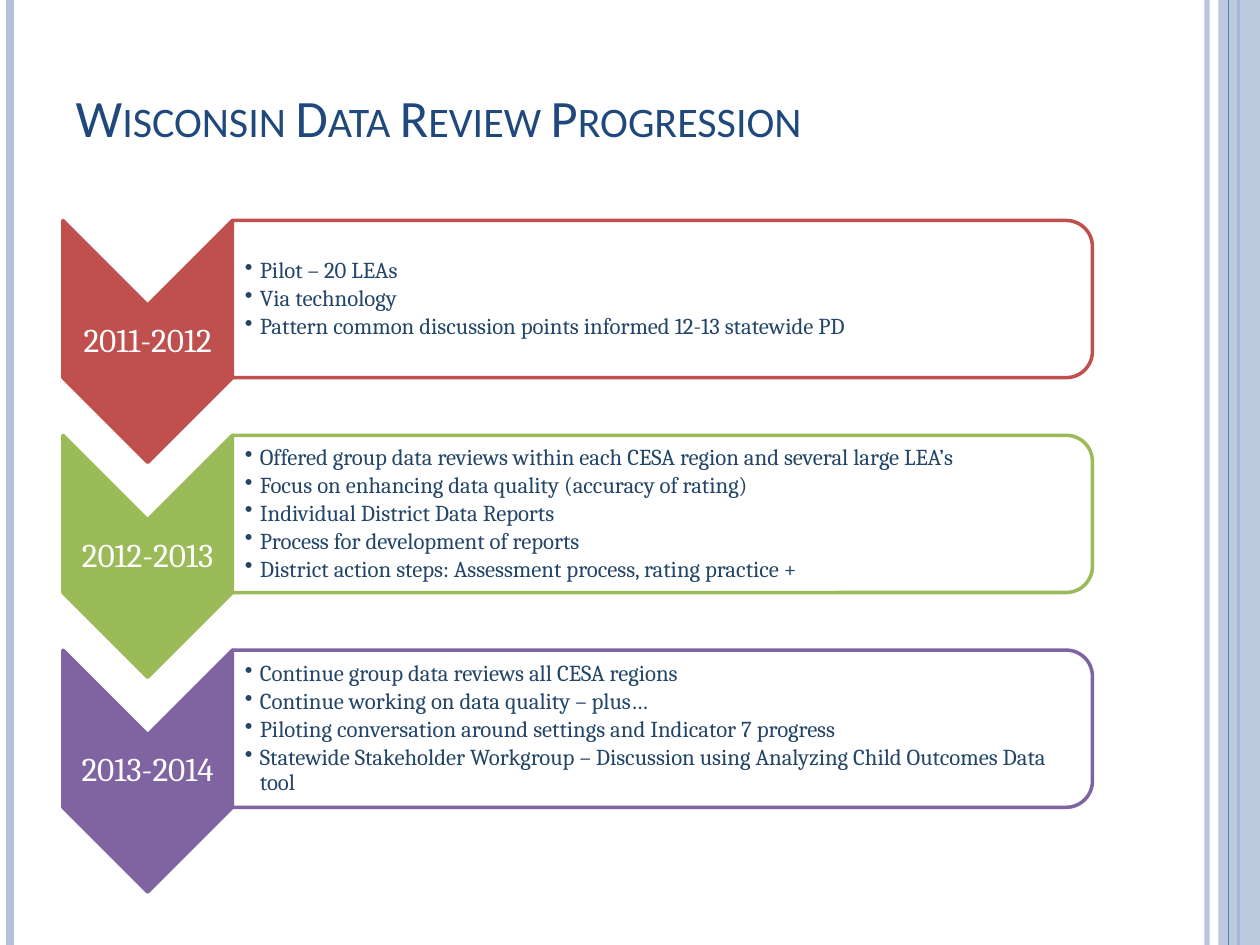
from dataclasses import dataclass

from lxml.etree import SubElement
from pptx import Presentation
from pptx.dml.color import RGBColor
from pptx.enum.shapes import MSO_CONNECTOR, MSO_SHAPE
from pptx.enum.text import MSO_ANCHOR, PP_ALIGN
from pptx.oxml.ns import qn
from pptx.util import Inches, Pt


@dataclass(frozen=True)
class Theme:
    title: str = "1F497D"
    body: str = "224568"
    white: str = "FFFFFF"
    band: str = "B3C1DB"
    rule: str = "4F81BD"
    phases: tuple = ("C0504D", "9BBB59", "8064A2")
    head_font: str = "Calibri"
    body_font: str = "Cambria"
    title_size: int = 30
    year_size: int = 19
    body_size: int = 13


T = Theme()
W, H = 10, 7.5

PHASES = [
    ("2011-2012", [
        "Pilot – 20 LEAs",
        "Via technology",
        "Pattern common discussion points informed 12-13 statewide PD",
    ]),
    ("2012-2013", [
        "Offered group data reviews within each CESA region and several large LEA’s",
        "Focus on enhancing data quality (accuracy of rating)",
        "Individual District Data Reports",
        "Process for development of reports",
        "District action steps: Assessment process, rating practice +",
    ]),
    ("2013-2014", [
        "Continue group data reviews all CESA regions",
        "Continue working on data quality – plus…",
        "Piloting conversation around settings and Indicator 7 progress",
        "Statewide Stakeholder Workgroup – Discussion using Analyzing Child Outcomes Data tool",
    ]),
]


def set_alpha(fill, percent):
    color = fill._xPr.find(qn("a:solidFill"))[0]
    SubElement(color, qn("a:alpha")).set("val", str(percent * 1000))


def add_shape(s, kind, box, fill, line=None, alpha=None, turned=False):
    """Place a shape in its visible box; a turned one is rotated a quarter."""
    x, y, w, h = box
    if turned:
        x, y, w, h = x + (w - h) / 2, y + (h - w) / 2, h, w
    sp = s.shapes.add_shape(kind, Inches(x), Inches(y), Inches(w), Inches(h))
    sp.shadow.inherit = False
    sp.rotation = 90 if turned else 0
    sp.fill.solid()
    sp.fill.fore_color.rgb = RGBColor.from_string(fill)
    if alpha:
        set_alpha(sp.fill, alpha)
    if line:
        sp.line.color.rgb = RGBColor.from_string(line)
        sp.line.width = Pt(2)
    else:
        sp.line.fill.background()
    return sp


def add_rule(s, x, color, width, alpha=None):
    """Draw a vertical rule over the full slide height."""
    line = s.shapes.add_connector(
        MSO_CONNECTOR.STRAIGHT, Inches(x), 0, Inches(x), Inches(H))
    line.line.color.rgb = RGBColor.from_string(color)
    line.line.width = Pt(width)
    if alpha:
        set_alpha(line.line.fill, alpha)
    SubElement(line._element.spPr, qn("a:effectLst"))


def format_text(p, text, font, size, color, align=None, after=0, spacing=None,
                bullet=False, small_caps=False):
    if bullet:
        pPr = p._p.get_or_add_pPr()
        pPr.set("marL", str(Inches(0.12)))
        pPr.set("indent", str(-Inches(0.12)))
        SubElement(pPr, qn("a:buChar")).set("char", "•")
    p.alignment = align
    p.line_spacing = spacing
    p.space_after = Pt(after)
    r = p.add_run()
    r.text = text
    r.font.name, r.font.size = font, Pt(size)
    r.font.color.rgb = RGBColor.from_string(color)
    if small_caps:
        r.font._element.set("cap", "small")


def add_text(s, box, lines, left_inset=0.01, **fmt):
    tf = s.shapes.add_textbox(*map(Inches, box)).text_frame
    tf.word_wrap = True
    tf.vertical_anchor = MSO_ANCHOR.MIDDLE
    tf.margin_left = Inches(left_inset)
    tf.margin_top = tf.margin_right = tf.margin_bottom = Inches(0.01)
    for i, line in enumerate(lines):
        p = tf.add_paragraph() if i else tf.paragraphs[0]
        format_text(p, line, font=T.body_font, spacing=0.9, **fmt)


def add_frame(s):
    """Decorative rules and band at the slide edges."""
    add_rule(s, W - 0.42, T.band, 3, alpha=93)
    add_rule(s, 0.08, T.band, 4.5)
    add_rule(s, W - 0.17, T.rule, 1.5)
    add_shape(s, MSO_SHAPE.RECTANGLE, (W - 0.33, 0, 0.33, H), T.band, alpha=87)
    add_rule(s, W - 0.25, T.rule, 0.75)


def add_title(s, box, text):
    title = s.shapes.title
    title.left, title.top, title.width, title.height = map(Inches, box)
    tf = title.text_frame
    tf.vertical_anchor = MSO_ANCHOR.MIDDLE
    format_text(tf.paragraphs[0], text, T.head_font, T.title_size, T.title,
                align=PP_ALIGN.LEFT, small_caps=True)


def add_phase(s, box, color, year, points):
    """A downward chevron with its year, and a panel of points beside it."""
    x, y, w, h = box
    arrow_w, panel_h = h * 0.7, h * 0.65
    panel_x, panel_w = x + arrow_w, w - arrow_w

    # Year chevron
    add_shape(s, MSO_SHAPE.CHEVRON, (x, y, arrow_w, h), color, color, turned=True)
    add_text(s, (x, y + h * 0.35, arrow_w, h * 0.3), [year], size=T.year_size,
             color=T.white, align=PP_ALIGN.CENTER)

    # Points panel
    add_shape(s, MSO_SHAPE.ROUND_2_SAME_RECTANGLE, (panel_x, y, panel_w, panel_h),
              T.white, color, alpha=90, turned=True)
    add_text(s, (panel_x, y + panel_h * 0.05, panel_w * 0.99, panel_h * 0.9),
             points, left_inset=0.1, size=T.body_size, color=T.body,
             after=1.9, bullet=True)


def add_progression(s, box, phases):
    """Stack phases so each chevron tip reaches into the next notch."""
    x, y, w, h = box
    phase_h = 1.92
    step = (h - phase_h) / (len(phases) - 1)
    for i, (year, points) in enumerate(phases):
        add_phase(s, (x, y + i * step, w, phase_h), T.phases[i], year, points)


def main():
    prs = Presentation()
    prs.slide_width, prs.slide_height = Inches(W), Inches(H)
    s = prs.slides.add_slide(prs.slide_layouts[5])
    add_frame(s)
    add_title(s, (0.5, 0.3, 8.17, 1.25), "Wisconsin Data Review Progression")
    add_progression(s, (0.5, 1.75, 8.17, 5.33), PHASES)
    prs.save("out.pptx")


if __name__ == "__main__":
    main()
